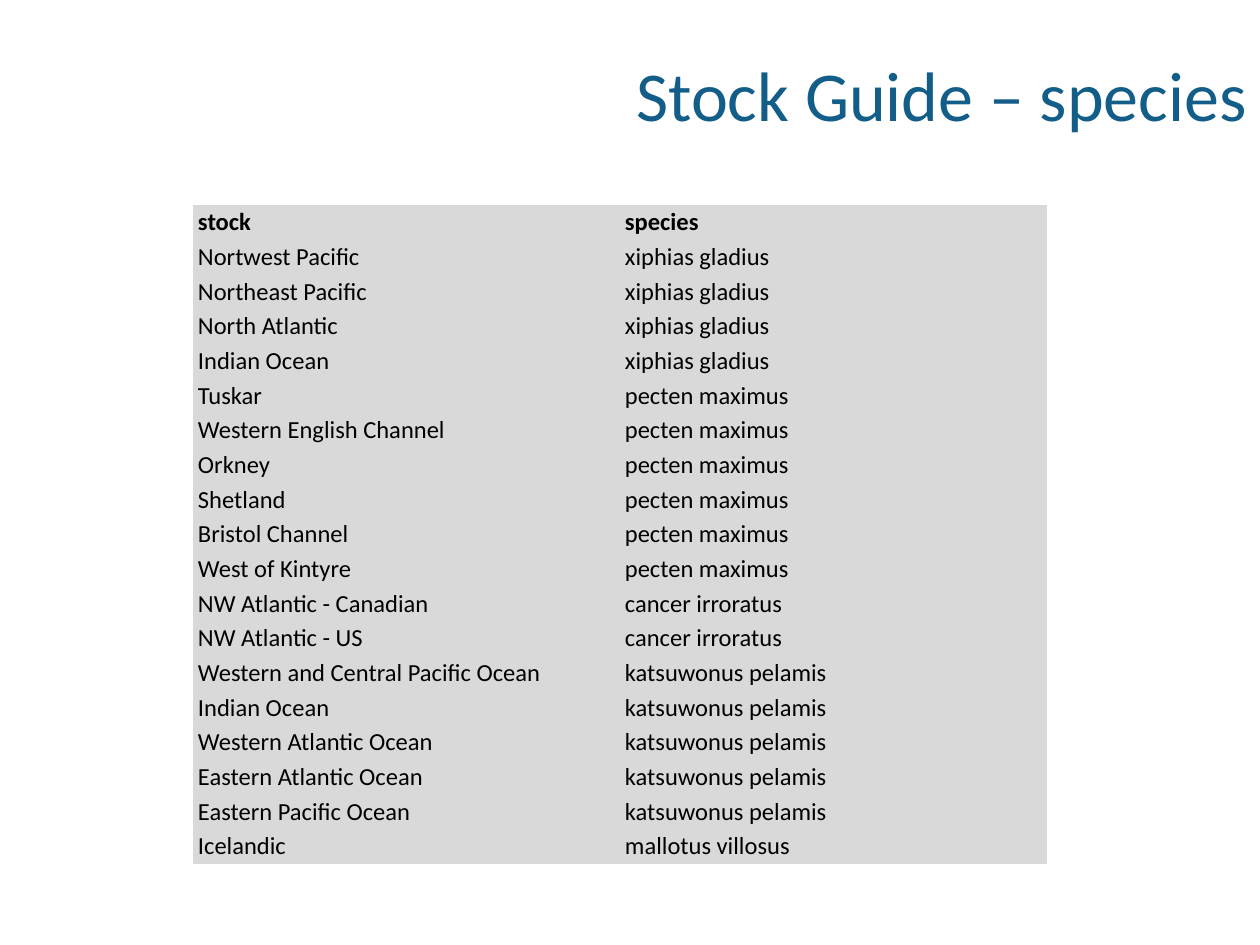
from pptx import Presentation
from pptx.dml.color import RGBColor
from pptx.enum.text import MSO_ANCHOR, PP_ALIGN
from pptx.oxml.ns import qn
from pptx.util import Emu, Pt

MIDDLE = MSO_ANCHOR.MIDDLE
RIGHT = PP_ALIGN.RIGHT
FONT = "Calibri"
NO_STYLE = "{2D5ABB26-0587-4C30-8999-92F81FD0307C}"
HEADER = ("stock", "species")
SPECIES = {
    "xiphias gladius": ["Nortwest Pacific", "Northeast Pacific",
                        "North Atlantic", "Indian Ocean"],
    "pecten maximus": ["Tuskar", "Western English Channel", "Orkney",
                       "Shetland", "Bristol Channel", "West of Kintyre"],
    "cancer irroratus": ["NW Atlantic - Canadian", "NW Atlantic - US"],
    "katsuwonus pelamis": ["Western and Central Pacific Ocean", "Indian Ocean",
                           "Western Atlantic Ocean", "Eastern Atlantic Ocean",
                           "Eastern Pacific Ocean"],
    "mallotus villosus": ["Icelandic"],
}


def px(n):
    return Emu(round(n * 914400 / 126))


def rgb(value):
    return RGBColor.from_string(value)


def add_run(p, text, size, color, bold=False):
    r = p.add_run()
    r.text = text
    r.font.name = FONT
    r.font.size = Pt(size)
    r.font.bold = bold
    r.font.color.rgb = rgb(color)


def add_title(s, x, y, w, h, text):
    tf = s.shapes.add_textbox(px(x), px(y), px(w), px(h)).text_frame
    tf.word_wrap = True
    tf.vertical_anchor = MIDDLE
    p = tf.paragraphs[0]
    p.alignment = RIGHT
    add_run(p, text, 40, "125E89")


def add_stock_table(s, x, y, w, h):
    rows = [HEADER] + [(stock, name) for name, stocks in SPECIES.items()
                       for stock in stocks]
    table = s.shapes.add_table(len(rows), len(HEADER),
                               px(x), px(y), px(w), px(h)).table
    table.first_row = False
    table.horz_banding = False
    table._tbl.tblPr.find(qn("a:tableStyleId")).text = NO_STYLE
    for i, row in enumerate(rows):
        for j, text in enumerate(row):
            cell = table.cell(i, j)
            cell.fill.solid()
            cell.fill.fore_color.rgb = rgb("D9D9D9")
            cell.vertical_anchor = MIDDLE
            cell.margin_left = cell.margin_right = px(5)
            cell.margin_top = cell.margin_bottom = px(2)
            add_run(cell.text_frame.paragraphs[0], text, 14, "000000", i == 0)


def main():
    prs = Presentation()
    prs.slide_width, prs.slide_height = px(1260), px(945)
    s = prs.slides.add_slide(prs.slide_layouts[6])
    add_title(s, 356, 15, 903, 158, "Stock Guide – species")
    add_stock_table(s, 193, 205, 854, 659)
    prs.save("out.pptx")


if __name__ == "__main__":
    main()
